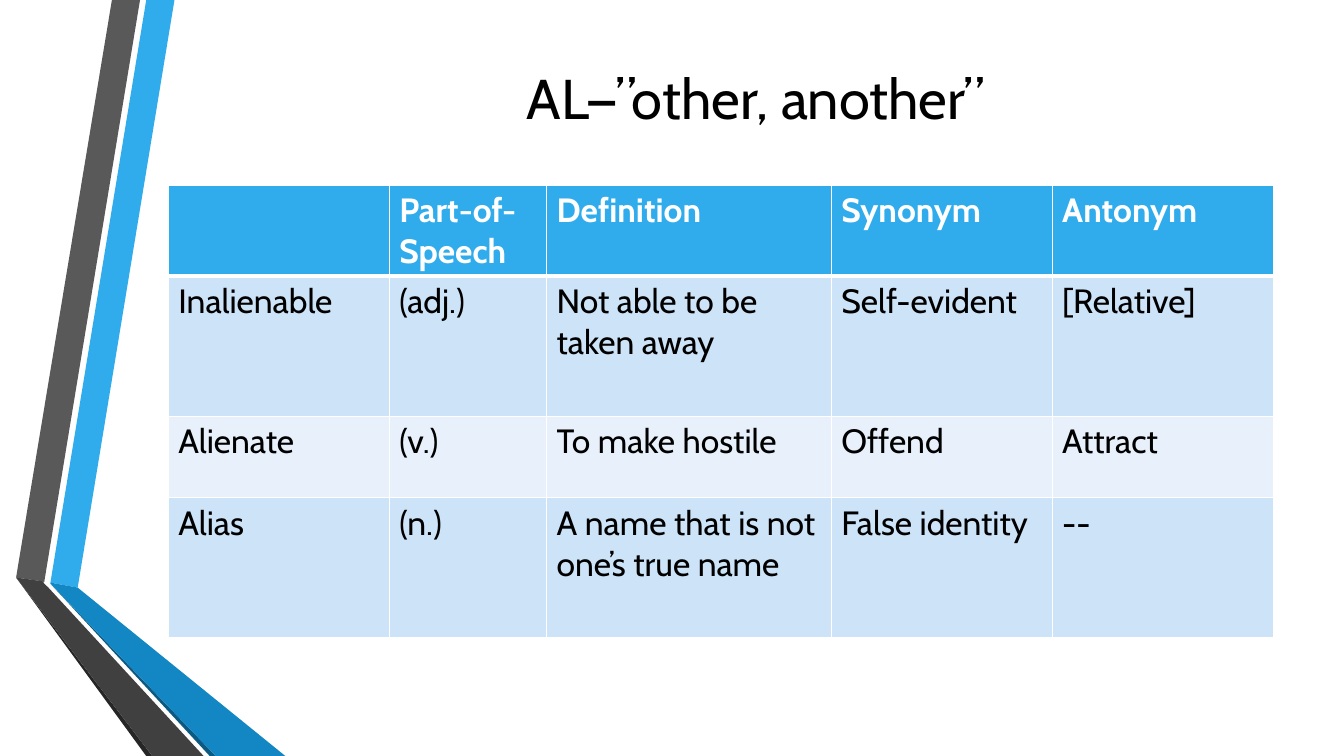
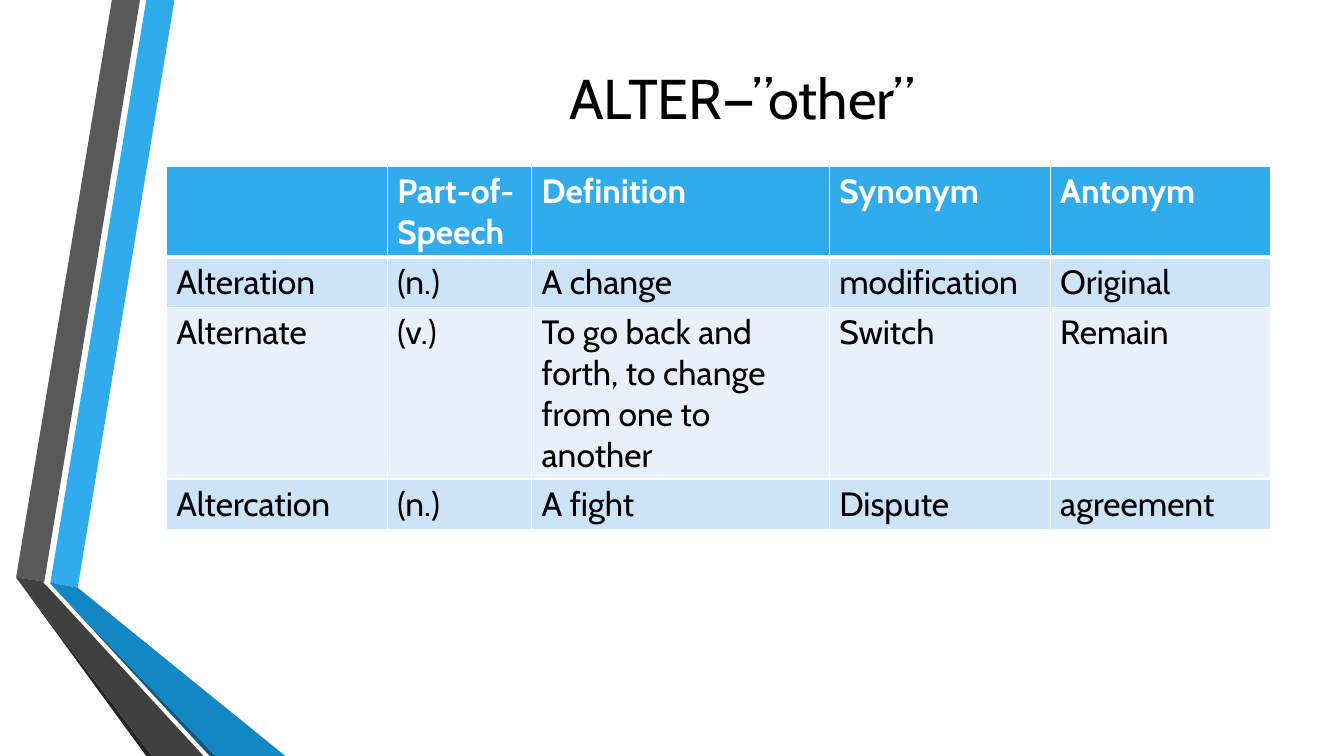
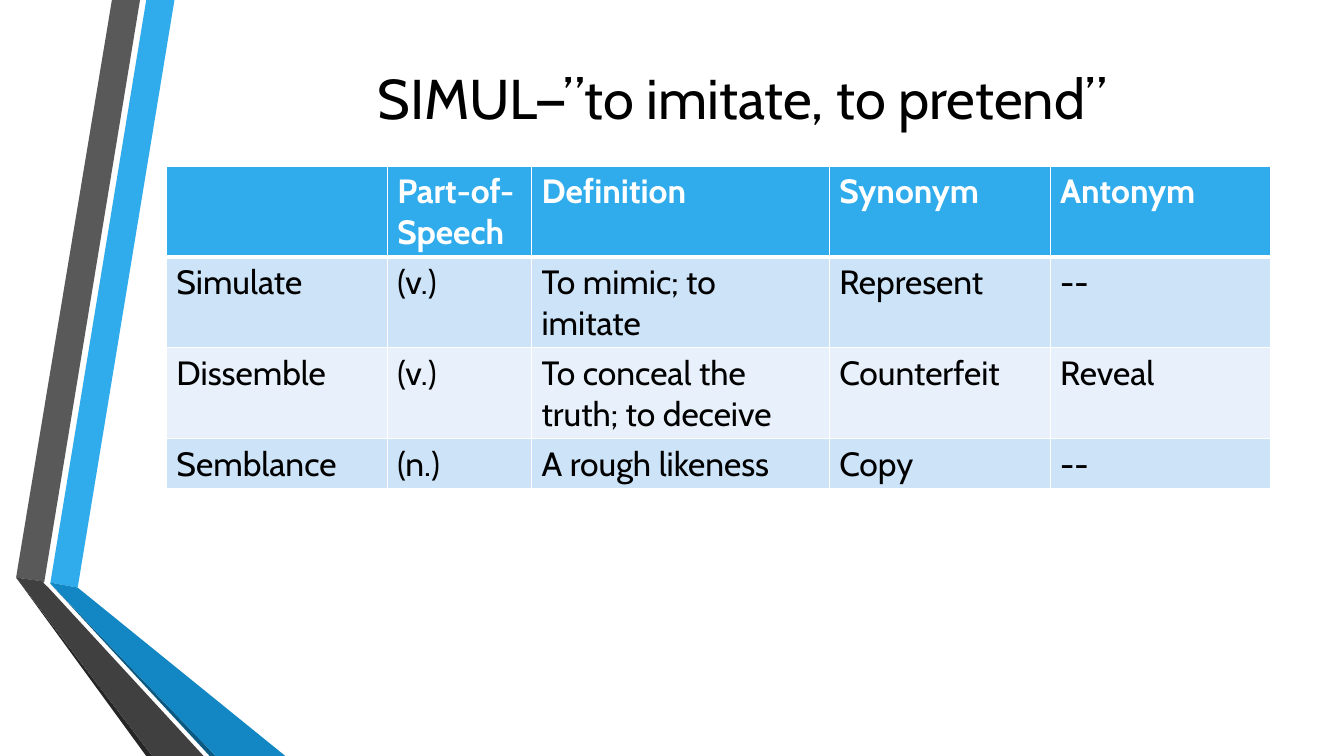
from dataclasses import dataclass

from lxml import etree
from pptx import Presentation
from pptx.dml.color import RGBColor
from pptx.enum.text import MSO_ANCHOR, PP_ALIGN
from pptx.oxml.ns import qn
from pptx.slide import Slide
from pptx.table import _Cell
from pptx.text.text import _Paragraph
from pptx.util import Emu, Inches, Pt

CENTER = PP_ALIGN.CENTER
MIDDLE = MSO_ANCHOR.MIDDLE

SLIDE_WIDTH = Inches(13.33)
SLIDE_HEIGHT = Inches(7.5)
FONT = "Cabin"
BLACK = "000000"
WHITE = "FFFFFF"
BLUE = "30ACEC"
ROW_TINTS = ("CDE3F8", "E8F1FB")
CONTENT_WIDTH = 82.2
TITLE_HEIGHT = 25.6
TITLE_SIZE = 40
TABLE_SIZE = 24
THIN_RULE = 1
HEADER_RULE = 3
HEADINGS = ("", "Part-of-Speech", "Definition", "Synonym", "Antonym")


@dataclass(frozen=True)
class Band:
    color: str
    outline: tuple[tuple[float, float], ...]


@dataclass(frozen=True)
class RootLesson:
    title: str
    title_left: float
    table_left: float
    table_top: float
    table_height: float
    speech_width: float
    row_heights: tuple[float, ...]
    words: tuple[tuple[str, ...], ...]


BANDS = (
    Band(BLUE, ((3.75, 77.07), (5.78, 77.73), (12.98, 0), (10.88, 0))),
    Band("595959", ((10.42, 0), (8.33, 0), (1.2, 76.4), (3.3, 76.93))),
    Band("262626", ((1.2, 76.4), (10.88, 100), (11.33, 100))),
    Band("0C5A82", ((3.75, 77.2), (15.6, 100), (16.05, 100))),
    Band("1287C3", ((3.75, 77.2), (16.05, 100), (21.23, 100), (5.78, 77.73), (3.75, 77.07))),
    Band("404040", ((15.15, 100), (3.6, 77.73), (3.22, 77.07), (3.3, 76.93),
                    (1.2, 76.4), (11.33, 100))),
)

LESSONS = (
    RootLesson(
        "AL—”other, another”", 15.15, 12.53, 24.53, 59.87, 11.7,
        (10.8, 18.53, 10.8, 18.53),
        (
            ("Inalienable", "(adj.)", "Not able to be taken away", "Self-evident", "[Relative]"),
            ("Alienate", "(v.)", "To make hostile", "Offend", "Attract"),
            ("Alias", "(n.)", "A name that is not one’s true name", "False identity", "--"),
        ),
    ),
    RootLesson(
        "ALTER—”other”", 14.1, 12.38, 22, 48, 10.73, (5.47,) * 4,
        (
            ("Alteration", "(n.)", "A change", "modification", "Original"),
            ("Alternate", "(v.)", "To go back and forth, to change from one to another",
             "Switch", "Remain"),
            ("Altercation", "(n.)", "A fight", "Dispute", "agreement"),
        ),
    ),
    RootLesson(
        "SIMUL—”to imitate, to pretend”", 14.1, 12.38, 22, 42.67, 10.73, (5.47,) * 4,
        (
            ("Simulate", "(v.)", "To mimic; to imitate", "Represent", "--"),
            ("Dissemble", "(v.)", "To conceal the truth; to deceive", "Counterfeit", "Reveal"),
            ("Semblance", "(n.)", "A rough likeness", "Copy", "--"),
        ),
    ),
)


def across(percent: float) -> Emu:
    return Emu(round(SLIDE_WIDTH * percent / 100))


def down(percent: float) -> Emu:
    return Emu(round(SLIDE_HEIGHT * percent / 100))


def rgb(color: str) -> RGBColor:
    return RGBColor.from_string(color)


def style(paragraph: _Paragraph, size: float, color: str, bold: bool = False) -> None:
    paragraph.font.name = FONT
    paragraph.font.size = Pt(size)
    paragraph.font.bold = bold
    paragraph.font.color.rgb = rgb(color)


def draw_band(slide: Slide, band: Band) -> None:
    start, *corners = [(across(x), down(y)) for x, y in band.outline]
    builder = slide.shapes.build_freeform(*start)
    builder.add_line_segments(corners, close=True)
    ribbon = builder.convert_to_shape()
    ribbon.shadow.inherit = False
    ribbon.fill.solid()
    ribbon.fill.fore_color.rgb = rgb(band.color)
    ribbon.line.fill.background()


def draw_title(slide: Slide, lesson: RootLesson) -> None:
    title = slide.shapes.add_textbox(
        across(lesson.title_left), 0, across(CONTENT_WIDTH), down(TITLE_HEIGHT))
    frame = title.text_frame
    frame.word_wrap = True
    frame.vertical_anchor = MIDDLE
    heading = frame.paragraphs[0]
    heading.text = lesson.title
    heading.alignment = CENTER
    style(heading, TITLE_SIZE, BLACK)


def rule_cell(cell: _Cell, top: float, bottom: float) -> None:
    properties = cell._tc.get_or_add_tcPr()
    edges = {"a:lnL": THIN_RULE, "a:lnR": THIN_RULE, "a:lnT": top, "a:lnB": bottom}
    for position, (tag, width) in enumerate(edges.items()):
        edge = etree.Element(qn(tag), w=str(Pt(width)))
        fill = etree.SubElement(edge, qn("a:solidFill"))
        etree.SubElement(fill, qn("a:srgbClr"), val=WHITE)
        properties.insert(position, edge)


def draw_word_table(slide: Slide, lesson: RootLesson) -> None:
    entries = (HEADINGS, *lesson.words)
    frame = slide.shapes.add_table(
        len(entries), len(HEADINGS), across(lesson.table_left), down(lesson.table_top),
        across(CONTENT_WIDTH), down(lesson.table_height))
    table = frame.table
    fifth = CONTENT_WIDTH / 5
    widths = (fifth, lesson.speech_width, 2 * fifth - lesson.speech_width, fifth, fifth)
    for column, width in zip(table.columns, widths):
        column.width = across(width)
    for row, height in zip(table.rows, lesson.row_heights):
        row.height = down(height)
    frame.height = down(lesson.table_height)
    for row_index, entry in enumerate(entries):
        is_header = row_index == 0
        tint = BLUE if is_header else ROW_TINTS[(row_index - 1) % 2]
        top = HEADER_RULE if row_index == 1 else THIN_RULE
        bottom = HEADER_RULE if is_header else THIN_RULE
        for column_index, wording in enumerate(entry):
            cell = table.cell(row_index, column_index)
            cell.text = wording
            cell.fill.solid()
            cell.fill.fore_color.rgb = rgb(tint)
            rule_cell(cell, top, bottom)
            style(cell.text_frame.paragraphs[0], TABLE_SIZE,
                  WHITE if is_header else BLACK, is_header)


def main() -> None:
    presentation = Presentation()
    presentation.slide_width = SLIDE_WIDTH
    presentation.slide_height = SLIDE_HEIGHT
    blank = presentation.slide_layouts[6]
    for lesson in LESSONS:
        slide = presentation.slides.add_slide(blank)
        for band in BANDS:
            draw_band(slide, band)
        draw_title(slide, lesson)
        draw_word_table(slide, lesson)
    presentation.save("out.pptx")


if __name__ == "__main__":
    main()
